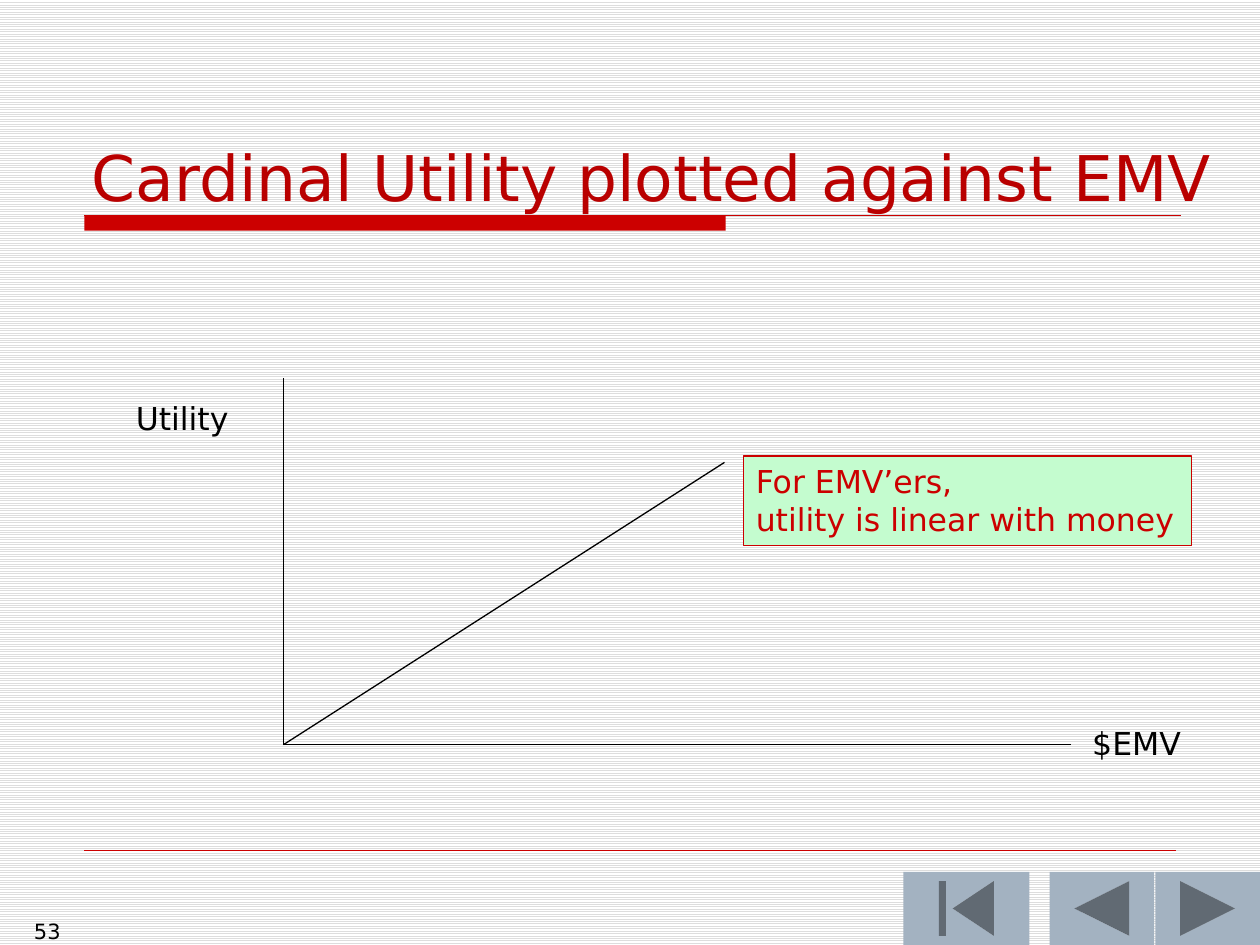
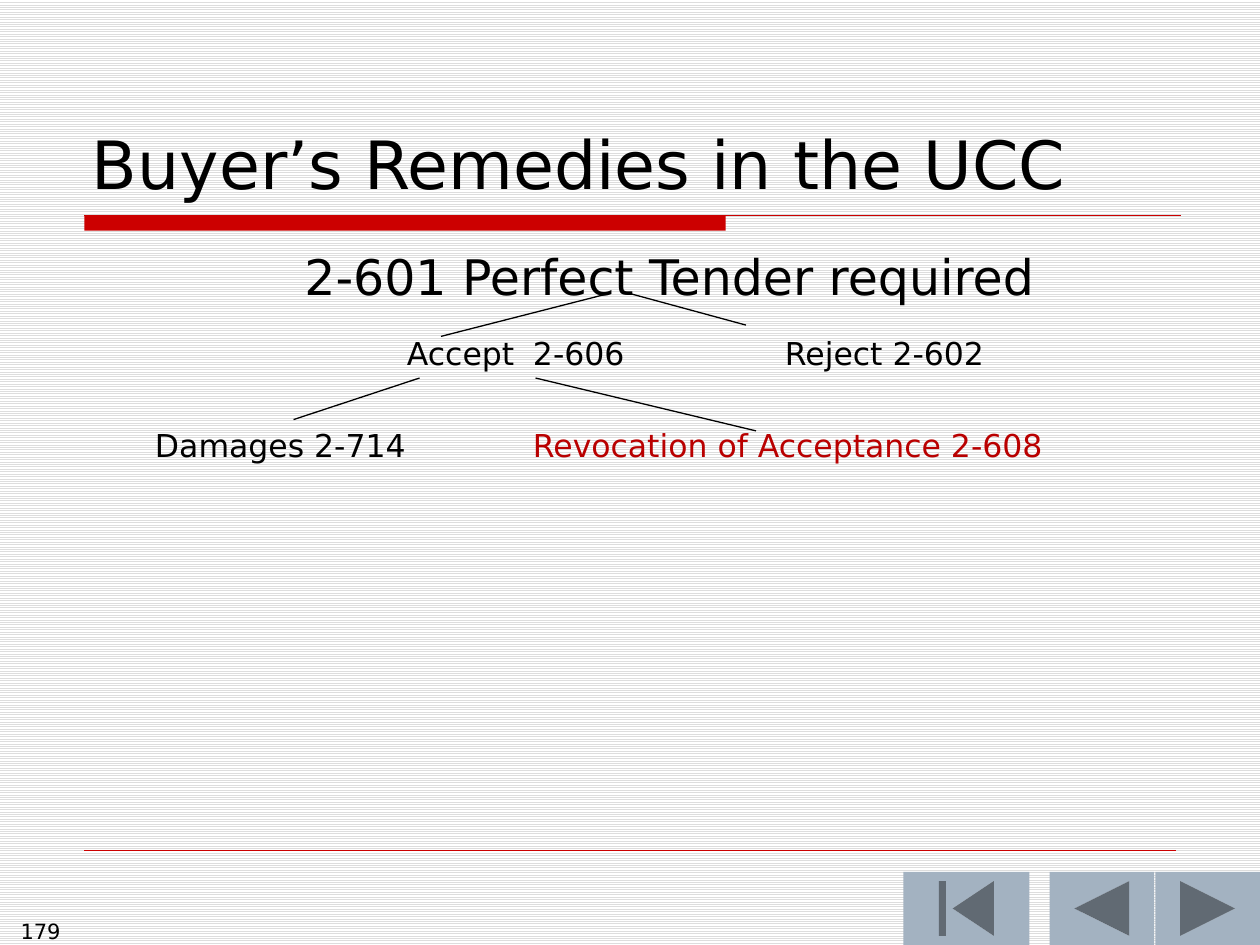
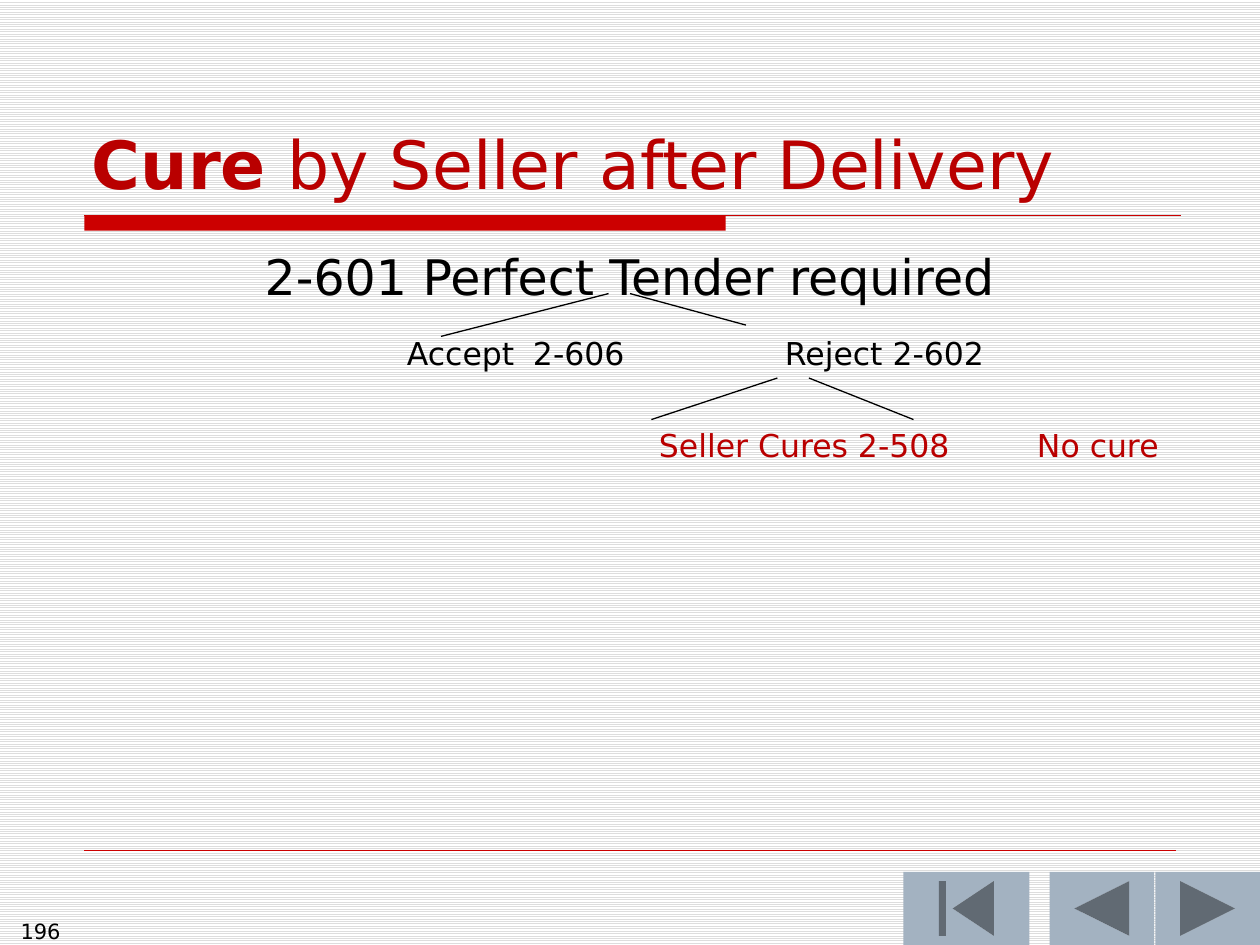
from dataclasses import dataclass
from typing import NamedTuple

from lxml import etree
from pptx import Presentation
from pptx import util as u
from pptx.dml.color import RGBColor
from pptx.enum import dml, shapes, text
from pptx.oxml import ns
from pptx.slide import Slide


@dataclass(frozen=True)
class Theme:
    font: str = "DejaVu Sans"
    black: str = "000000"
    accent: str = "CC0000"
    emphasis: str = "B90000"
    button: str = "A3B2C1"
    callout: str = "C4FCCF"
    paper: str = "FFFFFF"
    stripe: str = "DDDDDD"
    title: int = 38
    long_title: int = 36
    heading: int = 28
    label: int = 18
    number: int = 12
    rule: float = 0.75
    hairline: float = 0.25


THEME = Theme()
TAB_STEP = 1
TREE_HANG = 0.51
OUTCOME_GAP = 31


class Box(NamedTuple):
    left: float
    top: float
    width: float
    height: float


class Segment(NamedTuple):
    x1: float
    y1: float
    x2: float
    y2: float


class Span(NamedTuple):
    words: str
    color: str = THEME.black
    bold: bool = False


class Row(NamedTuple):
    spans: list[Span]
    hang: float = 0
    gap: float = 0
    size: int = THEME.label
    align: text.PP_ALIGN = text.PP_ALIGN.LEFT


class Button(NamedTuple):
    kind: shapes.MSO_SHAPE
    left: float
    width: float


class TreeSlide(NamedTuple):
    title: list[Span]
    number: str
    body_width: float
    outcomes: Row
    branches: list[Segment]


BUTTONS = [
    Button(shapes.MSO_SHAPE.ACTION_BUTTON_BACK_OR_PREVIOUS, 8.33, 0.83),
    Button(shapes.MSO_SHAPE.ACTION_BUTTON_BEGINNING, 7.17, 1),
    Button(shapes.MSO_SHAPE.ACTION_BUTTON_FORWARD_OR_NEXT, 9.17, 0.83),
]
AXES_AND_CURVE = [
    Segment(2.25, 3, 2.25, 5.91),
    Segment(2.25, 5.91, 8.5, 5.91),
    Segment(2.25, 5.91, 5.75, 3.67),
]
TENDER_ROWS = [
    Row([Span("2-601 Perfect Tender required")], size=THEME.heading,
        align=text.PP_ALIGN.CENTER),
    Row([Span("\t\t\tAccept\t2-606\t\tReject 2-602")], hang=TREE_HANG, gap=16),
]
TENDER_BRANCHES = [Segment(4.83, 2.33, 3.5, 2.67), Segment(5, 2.33, 5.92, 2.58)]
TREES = [
    TreeSlide(
        [Span("Buyer’s Remedies in the UCC")], "179", 9.38,
        Row([Span("\tDamages 2-714\t\t"),
             Span("Revocation of Acceptance 2-608", THEME.emphasis)],
            hang=TREE_HANG, gap=OUTCOME_GAP),
        [Segment(3.33, 3, 2.33, 3.33), Segment(4.25, 3, 6, 3.42)],
    ),
    TreeSlide(
        [Span("Cure", THEME.emphasis, True),
         Span(" by Seller after Delivery", THEME.emphasis)], "196", 8.75,
        Row([Span("\t\t\t\t\tSeller Cures 2-508\tNo cure", THEME.emphasis)],
            hang=TREE_HANG, gap=OUTCOME_GAP),
        [Segment(6.17, 3, 5.17, 3.33), Segment(6.42, 3, 7.25, 3.33)],
    ),
]


def rgb(color: str) -> RGBColor:
    return RGBColor.from_string(color)


def place(shape, box: Box) -> None:
    shape.left, shape.top, shape.width, shape.height = map(u.Inches, box)


def write(shape, rows: list[Row], wrap: bool = True,
          anchor: text.MSO_ANCHOR = text.MSO_ANCHOR.TOP) -> None:
    frame = shape.text_frame
    frame.word_wrap = wrap
    frame.auto_size = (text.MSO_AUTO_SIZE.NONE if wrap
                       else text.MSO_AUTO_SIZE.SHAPE_TO_FIT_TEXT)
    frame.vertical_anchor = anchor
    for index, row in enumerate(rows):
        paragraph = frame.add_paragraph() if index else frame.paragraphs[0]
        paragraph.alignment = row.align
        paragraph.space_before = u.Pt(row.gap)
        properties = paragraph._p.get_or_add_pPr()
        properties.set("marL", str(u.Inches(row.hang)))
        properties.set("indent", str(u.Inches(-row.hang)))
        properties.set("defTabSz", str(u.Inches(TAB_STEP)))
        etree.SubElement(properties, ns.qn("a:buNone"))
        for span in row.spans:
            run = paragraph.add_run()
            run.text = span.words
            run.font.name = THEME.font
            run.font.size = u.Pt(row.size)
            run.font.bold = span.bold
            run.font.color.rgb = rgb(span.color)


def add_segment(slide: Slide, segment: Segment, color: str = THEME.black,
                width: float = THEME.rule):
    line = slide.shapes.add_connector(
        shapes.MSO_CONNECTOR.STRAIGHT, *map(u.Inches, segment))
    line.line.color.rgb = rgb(color)
    line.line.width = u.Pt(width)
    etree.SubElement(line.element.spPr, ns.qn("a:effectLst"))
    return line


def add_filled(slide: Slide, kind: shapes.MSO_SHAPE, box: Box, color: str):
    shape = slide.shapes.add_shape(kind, *map(u.Inches, box))
    shape.shadow.inherit = False
    shape.fill.solid()
    shape.fill.fore_color.rgb = rgb(color)
    shape.line.fill.background()
    return shape


def add_label(slide: Slide, box: Box, row: Row, wrap: bool = False) -> None:
    write(slide.shapes.add_textbox(*map(u.Inches, box)), [row], wrap)


def dress_master(prs, slide: Slide) -> None:
    fill = prs.slide_master.background.fill
    fill.patterned()
    fill.pattern = dml.MSO_PATTERN.LIGHT_HORIZONTAL
    fill.fore_color.rgb = rgb(THEME.stripe)
    fill.back_color.rgb = rgb(THEME.paper)
    furniture = [
        add_filled(slide, shapes.MSO_SHAPE.RECTANGLE,
                   Box(0.67, 1.71, 5.09, 0.12), THEME.accent),
        add_segment(slide, Segment(0.67, 1.71, 9.37, 1.71), THEME.accent),
        add_segment(slide, Segment(0.67, 6.75, 9.33, 6.75), THEME.accent,
                    THEME.hairline),
    ]
    furniture += [
        add_filled(slide, button.kind,
                   Box(button.left, 6.92, button.width, 0.58), THEME.button)
        for button in BUTTONS
    ]
    for part in furniture:
        prs.slide_master.shapes.element.append(part.element)


def start_slide(prs, layout: int, title: Row, title_box: Box,
                number: str) -> Slide:
    slide = prs.slides.add_slide(prs.slide_layouts[layout])
    place(slide.shapes.title, title_box)
    write(slide.shapes.title, [title], anchor=text.MSO_ANCHOR.BOTTOM)
    add_label(slide, Box(0, 7.24, 0.58, 0.26),
              Row([Span(number)], size=THEME.number,
                  align=text.PP_ALIGN.RIGHT), wrap=True)
    return slide


def build_utility(prs) -> Slide:
    title = Row([Span("Cardinal Utility plotted against EMV", THEME.emphasis)],
                size=THEME.long_title)
    slide = start_slide(prs, 5, title, Box(0.63, 0.33, 9.37, 1.42), "53")
    for segment in AXES_AND_CURVE:
        add_segment(slide, segment)
    add_label(slide, Box(0.98, 3.12, 0.94, 0.4), Row([Span("Utility")]))
    add_label(slide, Box(8.57, 5.7, 0.91, 0.4), Row([Span("$EMV")]))
    callout = add_filled(slide, shapes.MSO_SHAPE.RECTANGLE,
                         Box(5.9, 3.62, 3.56, 0.71), THEME.callout)
    callout.line.color.rgb = rgb(THEME.accent)
    callout.line.width = u.Pt(THEME.rule)
    write(callout, [Row([Span(words, THEME.accent)]) for words in
                    ("For EMV’ers,", "utility is linear with money")],
          wrap=False)
    return slide


def build_tree(prs, tree: TreeSlide) -> None:
    slide = start_slide(prs, 1, Row(tree.title, size=THEME.title),
                        Box(0.63, 0.33, 8.75, 1.33), tree.number)
    body = slide.placeholders[1]
    place(body, Box(0.62, 1.91, tree.body_width, 4.67))
    write(body, TENDER_ROWS + [tree.outcomes])
    for segment in TENDER_BRANCHES + tree.branches:
        add_segment(slide, segment)


def main() -> None:
    prs = Presentation()
    prs.slide_width, prs.slide_height = u.Inches(10), u.Inches(7.5)
    dress_master(prs, build_utility(prs))
    for tree in TREES:
        build_tree(prs, tree)
    prs.save("out.pptx")


if __name__ == "__main__":
    main()
